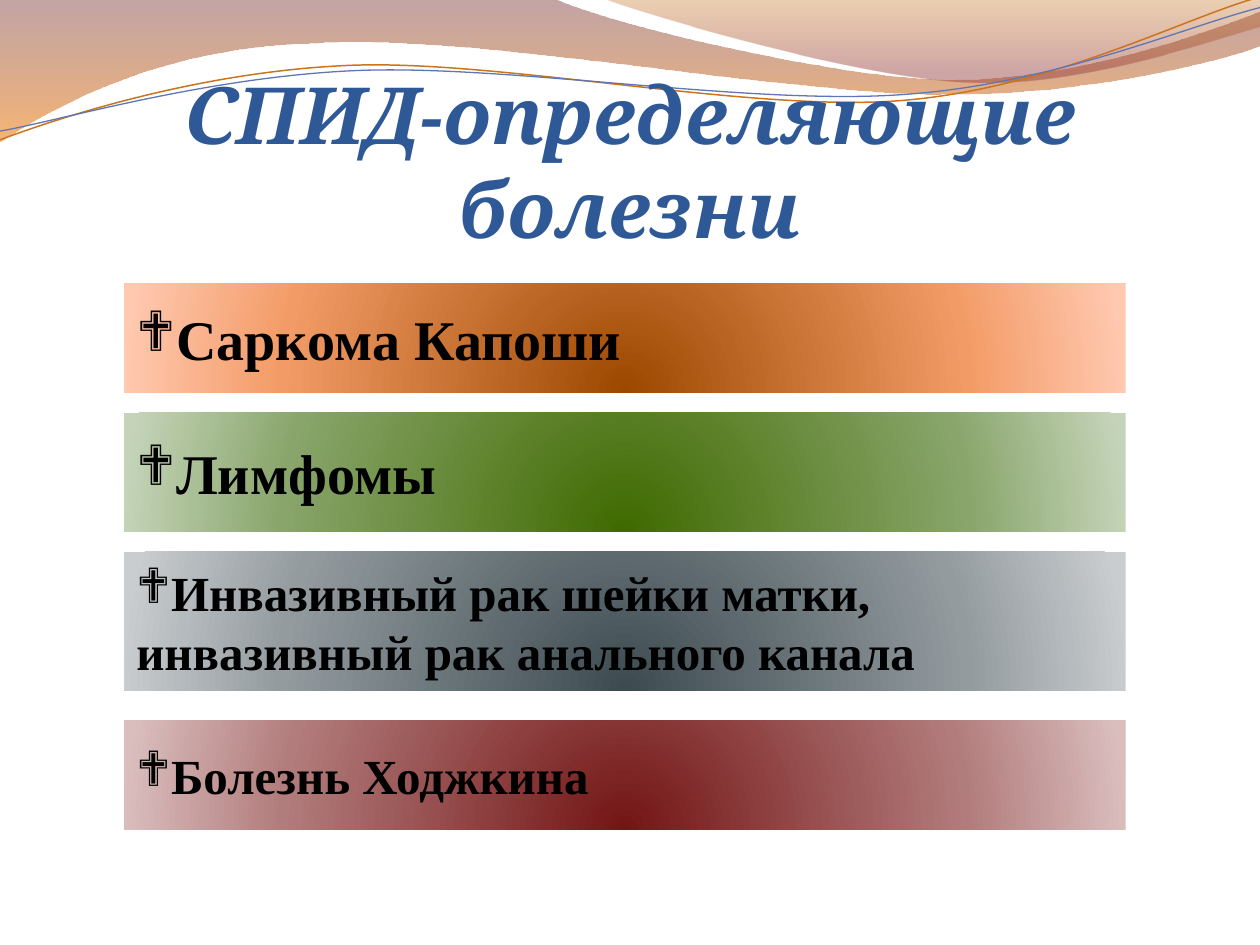
import lxml.etree
import pptx
import pptx.dml.color
import pptx.enum.shapes
import pptx.enum.text
import pptx.oxml
import pptx.oxml.ns
import pptx.util

Pt = pptx.util.Pt
qn = pptx.oxml.ns.qn


def color(hex_string):
    return pptx.dml.color.RGBColor.from_string(hex_string)


class SlideBuilder:
    heading_font = "Cambria"
    body_font = "Times New Roman"
    bullet_font = "Wingdings"
    heading_color = "2F5897"
    text_color = "000000"

    def __init__(self, presentation):
        self.slide = presentation.slides.add_slide(presentation.slide_layouts[5])
        self.shapes = self.slide.shapes

    def gradient(self, shape, stops, direction):
        """Fill with stops of (position %, colour, opacity %)."""
        shape.fill.background()
        grad = lxml.etree.Element(qn("a:gradFill"), rotWithShape="1")
        stop_list = lxml.etree.SubElement(grad, qn("a:gsLst"))
        for position, hex_string, opacity in stops:
            stop = lxml.etree.SubElement(stop_list, qn("a:gs"), pos=str(position * 1000))
            tint = lxml.etree.SubElement(stop, qn("a:srgbClr"), val=hex_string)
            if opacity < 100:
                lxml.etree.SubElement(tint, qn("a:alpha"), val=str(opacity * 1000))
        grad.append(direction)
        properties = shape._element.spPr
        properties.replace(properties.find(qn("a:noFill")), grad)

    def downward(self):
        return lxml.etree.Element(qn("a:lin"), ang="5400000", scaled="0")

    def from_bottom_centre(self):
        circle = lxml.etree.Element(qn("a:path"), attrib={"path": "circle"})
        lxml.etree.SubElement(circle, qn("a:fillToRect"),
                              l="50000", t="130000", r="50000", b="-30000")
        return circle

    def outline(self, start, segments, closed):
        """Each segment is one point (line) or three points (curve)."""
        builder = self.shapes.build_freeform(Pt(start[0]), Pt(start[1]), scale=1)
        builder.add_line_segments(
            [(Pt(x), Pt(y)) for segment in segments for x, y in segment], close=closed)
        shape = builder.convert_to_shape()
        shape.shadow.inherit = False

        # Join the three points of each curve into one cubic segment
        lines = iter(list(shape._element.iter(qn("a:lnTo"))))
        for segment in segments:
            steps = [next(lines) for _ in segment]
            if len(steps) == 3:
                curve = lxml.etree.Element(qn("a:cubicBezTo"))
                steps[0].addprevious(curve)
                for step in steps:
                    curve.append(step[0])
                    step.getparent().remove(step)
        return shape

    def ribbon(self, start, segments, stops):
        shape = self.outline(start, segments, closed=True)
        self.gradient(shape, stops, self.downward())
        shape.line.fill.background()

    def wave(self, start, segments, hex_string, width):
        shape = self.outline(start, segments, closed=False)
        shape.fill.background()
        shape.line.color.rgb = color(hex_string)
        shape.line.width = Pt(width)

    def title(self, text, left, top, width, height, size):
        heading = self.shapes.title
        self.shapes._spTree.append(heading._element)  # in front of the ribbons
        heading.left, heading.top = Pt(left), Pt(top)
        heading.width, heading.height = Pt(width), Pt(height)
        frame = heading.text_frame
        frame.text = text
        frame.word_wrap = True
        frame.auto_size = pptx.enum.text.MSO_AUTO_SIZE.NONE
        frame.vertical_anchor = pptx.enum.text.MSO_ANCHOR.BOTTOM
        frame.margin_left = frame.margin_right = frame.margin_bottom = 0
        frame.margin_top = Pt(3.6)
        paragraph = frame.paragraphs[0]
        paragraph.alignment = pptx.enum.text.PP_ALIGN.CENTER
        self.font(paragraph, self.heading_font, size, self.heading_color)
        paragraph.font.italic = True

    def bar(self, text, left, top, width, height, size, tints):
        shape = self.shapes.add_shape(pptx.enum.shapes.MSO_SHAPE.RECTANGLE,
                                      Pt(left), Pt(top), Pt(width), Pt(height))
        shape.shadow.inherit = False
        stops = [(position, tint, 100) for position, tint in zip((0, 68, 100), tints)]
        self.gradient(shape, stops, self.from_bottom_centre())
        shape.line.fill.background()
        frame = shape.text_frame
        frame.text = text
        frame.word_wrap = True
        frame.vertical_anchor = pptx.enum.text.MSO_ANCHOR.MIDDLE
        paragraph = frame.paragraphs[0]
        paragraph.alignment = pptx.enum.text.PP_ALIGN.LEFT
        self.font(paragraph, self.body_font, size, self.text_color)
        properties = paragraph._p.pPr
        properties.insert(0, lxml.etree.Element(qn("a:buFont"), typeface=self.bullet_font,
                                                pitchFamily="2", charset="2"))
        properties.insert(1, lxml.etree.Element(qn("a:buChar"), char="❖"))

    def font(self, paragraph, name, size, hex_string):
        paragraph.font.name = name
        paragraph.font.size = Pt(size)
        paragraph.font.bold = True
        paragraph.font.color.rgb = color(hex_string)


def main():
    presentation = pptx.Presentation()
    presentation.slide_width, presentation.slide_height = Pt(720), Pt(540)
    builder = SlideBuilder(presentation)

    # Ribbons along the top edge
    builder.ribbon((0, 0), [
        [(316.8, -0.7)],
        [(342.7, 12.2), (478.1, 45.4), (545.8, 45.4)],
        [(614.2, 45.4), (689.8, 18.7), (720, 6.5)],
        [(720.7, 25.9)],
        [(707.8, 31.7), (626.4, 54.7), (537.1, 54)],
        [(447.8, 54), (275, 20.2), (185, 24.5)],
        [(92.9, 25.9), (33.1, 59.8), (-0.7, 81.4)],
        [(0, 0)],
    ], [(0, "793737", 45), (100, "F07800", 55)])
    builder.ribbon((344.9, -0.7), [
        [(366.5, 7.9), (491, 44.6), (553.7, 46.8)],
        [(616.3, 49.7), (691.9, 23), (720, 15.1)],
        [(720, 0)],
        [(344.9, -0.7)],
    ], [(0, "C06203", 30), (80, "973B3B", 45)])

    # Thin waves
    builder.wave((0, 79.9), [
        [(34.6, 67), (113.8, 41), (199.4, 37.4)],
        [(284.4, 33.8), (427, 64.1), (513.4, 57.6)],
        [(599.8, 51.1), (675.4, 10.8), (718.6, -1.4)],
    ], "CB741E", 0.85)
    builder.wave((0, 74.9), [
        [(33.8, 69.1), (118.1, 43.9), (203.8, 40.3)],
        [(290.2, 36.7), (429.8, 60.5), (516.2, 54)],
        [(601.9, 48.2), (677.5, 15.1), (720, 4.3)],
    ], "6076B4", 0.75)

    builder.title("СПИД-определяющие болезни", 36, 55.4, 648, 90, 45)

    # Disease bars: text, top, height, text size, tints from the centre outwards
    diseases = [
        ("Саркома Капоши", 162, 62.6, 32, ("9C4800", "F39B66", "FFC9B1")),
        ("Лимфомы", 236, 67.8, 32, ("3F6A00", "89A56B", "C5D4B9")),
        ("Инвазивный рак шейки матки, инвазивный рак анального канала",
         315.2, 79.4, 28, ("3D4B51", "939B9F", "C9CDCF")),
        ("Болезнь Ходжкина", 411.6, 62.6, 28, ("731515", "B27C7C", "DABEBE")),
    ]
    for text, top, height, size, tints in diseases:
        builder.bar(text, 70.8, top, 572.4, height, size, tints)

    presentation.save("out.pptx")


if __name__ == "__main__":
    main()
